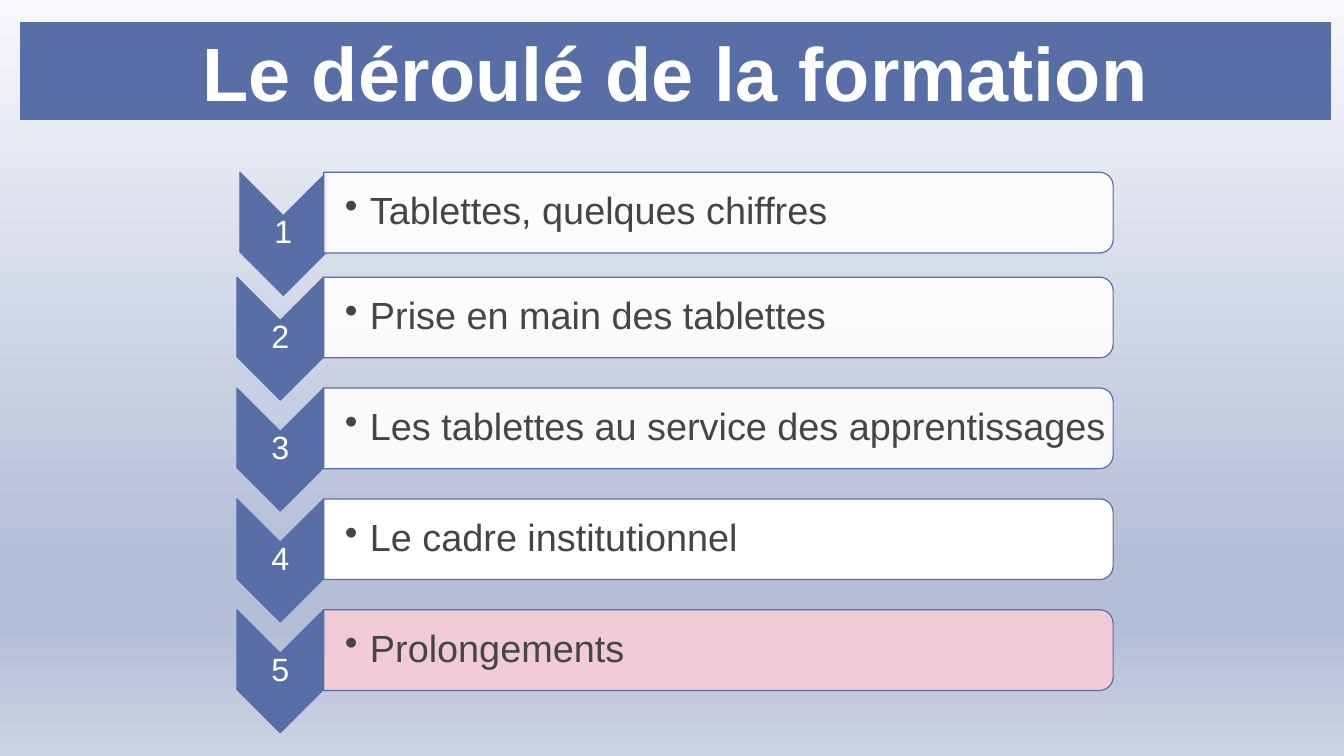
from lxml.etree import SubElement
from pptx import Presentation
from pptx.dml.color import RGBColor as RGB
from pptx.enum.shapes import MSO_SHAPE as SHAPE
from pptx.enum.text import MSO_ANCHOR as ANCHOR, PP_ALIGN as ALIGN
from pptx.oxml.ns import qn
from pptx.util import Inches, Pt

COLORS = {
    "blue": "586EA6",
    "white": "FFFFFF",
    "pink": "F7CCD6",
    "text": "454545",
}
BACKGROUND = [(0, "F7F8FB"), (74, "B4BED7"), (83, "B4BED7"), (100, "CDD3E4")]

# Step text, bar colour, bar opacity in percent
STEPS = [
    ("Tablettes, quelques chiffres", "white", 90),
    ("Prise en main des tablettes", "white", 90),
    ("Les tablettes au service des apprentissages", "white", 90),
    ("Le cadre institutionnel", "white", 100),
    ("Prolongements", "pink", 90),
]


def rgb(name):
    return RGB.from_string(COLORS[name])


def write(tf, text, size, color, align=ALIGN.LEFT, bold=False, bullet=False,
          spacing=None, insets=None):
    """Put one formatted paragraph in a text frame."""
    tf.word_wrap = True
    tf.vertical_anchor = ANCHOR.MIDDLE
    if insets:
        (tf.margin_left, tf.margin_top,
         tf.margin_right, tf.margin_bottom) = map(Inches, insets)
    p = tf.paragraphs[0]
    p.alignment = align
    p.line_spacing = spacing
    if bullet:
        pPr = p._p.get_or_add_pPr()
        pPr.set("marL", str(Inches(0.25)))
        pPr.set("indent", str(-Inches(0.25)))
        SubElement(pPr, qn("a:buChar"), char="•")
    r = p.add_run()
    r.text = text
    r.font.name = "Arial"
    r.font.size = Pt(size)
    r.font.bold = bold
    r.font.color.rgb = rgb(color)


class Deck:
    def __init__(self):
        self.prs = Presentation()
        self.prs.slide_width = Inches(13.33)
        self.prs.slide_height = Inches(7.5)
        self.slide = self.prs.slides.add_slide(self.prs.slide_layouts[5])

    def background(self, stops):
        fill = self.slide.background.fill
        fill.gradient()
        fill.gradient_angle = 270
        gs_list = self.slide.element.find(".//" + qn("a:gsLst"))
        gs_list.clear()
        for pos, color in stops:
            gs = SubElement(gs_list, qn("a:gs"), pos=str(pos * 1000))
            SubElement(gs, qn("a:srgbClr"), val=color)

    def title(self, text, x, y, w, h):
        sp = self.slide.shapes.title
        sp.left, sp.top, sp.width, sp.height = map(Inches, (x, y, w, h))
        sp.fill.solid()
        sp.fill.fore_color.rgb = rgb("blue")
        write(sp.text_frame, text, 54, "white", ALIGN.CENTER, bold=True)

    def turned_shape(self, kind, x, y, w, h, color, opacity=100):
        """Add a shape turned by 90 degrees that covers the given area."""
        left, top = x + (w - h) / 2, y + (h - w) / 2
        sp = self.slide.shapes.add_shape(
            kind, Inches(left), Inches(top), Inches(h), Inches(w))
        sp.rotation = 90
        sp.shadow.inherit = False
        sp.fill.solid()
        sp.fill.fore_color.rgb = rgb(color)
        if opacity < 100:
            clr = sp._element.spPr.find(qn("a:solidFill"))[0]
            SubElement(clr, qn("a:alpha"), val=str(opacity * 1000))
        sp.line.color.rgb = rgb("blue")
        sp.line.width = Pt(0.85)

    def text(self, text, x, y, w, h, **style):
        box = self.slide.shapes.add_textbox(*map(Inches, (x, y, w, h)))
        write(box.text_frame, text, spacing=0.9, **style)

    def step(self, number, text, x, y, color, opacity):
        # Numbered chevron
        self.turned_shape(SHAPE.CHEVRON, x, y, 0.86, 1.22, "blue")
        self.text(str(number), x, y + 0.42, 0.86, 0.37, size=23,
                  color="white", align=ALIGN.CENTER, insets=[0.02] * 4)
        # Bar with its label
        self.turned_shape(SHAPE.ROUND_2_SAME_RECTANGLE, 3.21, y, 7.83, 0.8,
                          color, opacity)
        self.text(text, 3.21, y + 0.04, 7.8, 0.72, size=27, color="text",
                  bullet=True, insets=(0.21, 0.02, 0.02, 0.02))


def main():
    deck = Deck()
    deck.background(BACKGROUND)
    deck.title("Le déroulé de la formation", 0.2, 0.22, 13, 0.97)

    # Steps are evenly spaced, with the first one slightly lower and to the right
    for i, (text, color, opacity) in enumerate(STEPS):
        x, y = (2.35, 1.65 + 1.1 * i) if i else (2.38, 1.71)
        deck.step(i + 1, text, x, y, color, opacity)

    deck.prs.save("out.pptx")


if __name__ == "__main__":
    main()
